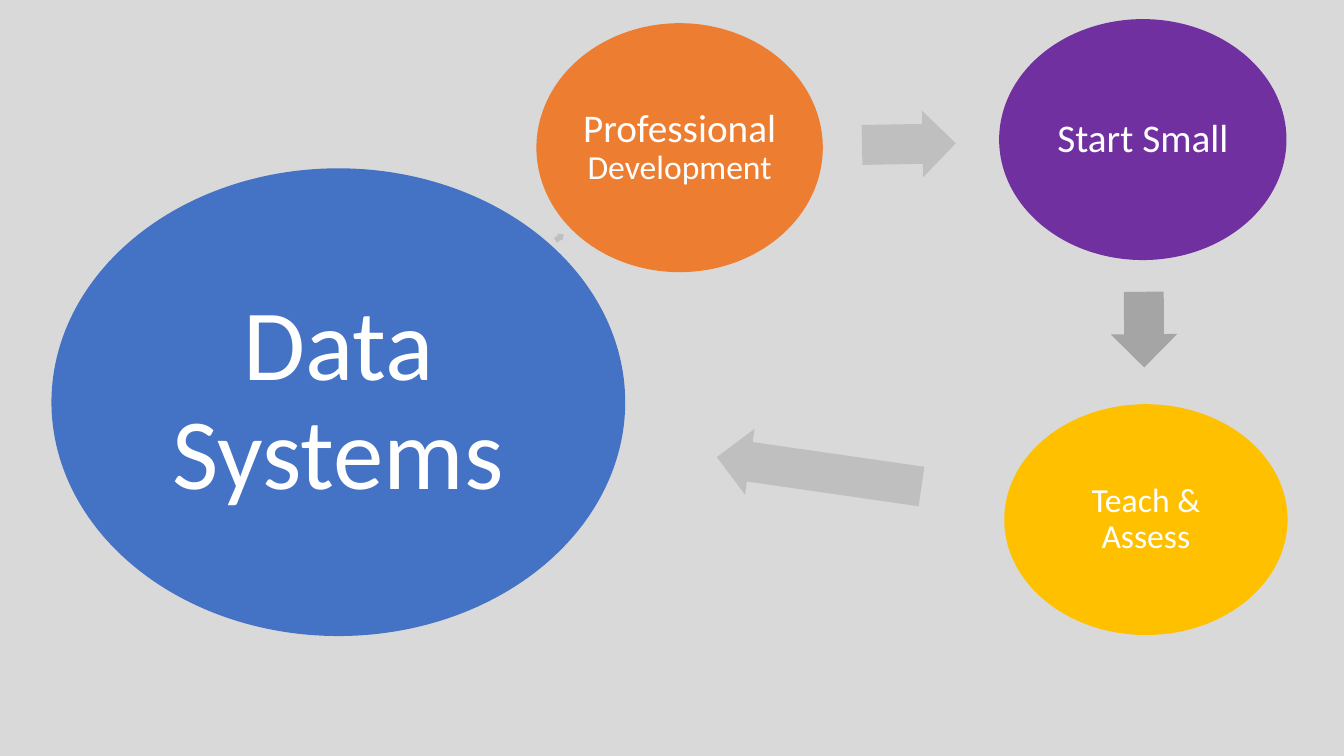
from pptx import Presentation
from pptx.dml.color import RGBColor
from pptx.enum.shapes import MSO_SHAPE
from pptx.enum.text import MSO_ANCHOR, PP_ALIGN
from pptx.util import Inches, Pt

OVAL = MSO_SHAPE.OVAL
ARROW = MSO_SHAPE.RIGHT_ARROW
MIDDLE = MSO_ANCHOR.MIDDLE
CENTER = PP_ALIGN.CENTER

PALE = RGBColor(0xD9, 0xD9, 0xD9)
SILVER = RGBColor(0xBF, 0xBF, 0xBF)
GREY = RGBColor(0xA5, 0xA5, 0xA5)
WHITE = RGBColor(0xFF, 0xFF, 0xFF)
ORANGE = RGBColor(0xED, 0x7D, 0x31)
PURPLE = RGBColor(0x70, 0x30, 0xA0)
GOLD = RGBColor(0xFF, 0xC0, 0x00)
BLUE = RGBColor(0x44, 0x72, 0xC4)

deck = Presentation()
deck.slide_width = Inches(13.33)
deck.slide_height = Inches(7.5)
col = deck.slide_width / 100
row = deck.slide_height / 100

slide = deck.slides.add_slide(deck.slide_layouts[6])
slide.background.fill.solid()
slide.background.fill.fore_color.rgb = PALE


def place(kind, box, fill):
    left, top, wide, high = box
    shape = slide.shapes.add_shape(
        kind, int(left * col), int(top * row), int(wide * col), int(high * row))
    shape.shadow.inherit = False
    shape.fill.solid()
    shape.fill.fore_color.rgb = fill
    shape.line.fill.background()
    return shape


steps = [
    ((39.91, 3.07, 21.31, 32.93), ORANGE, 0.04, [("Professional", 28), (" Development", 24)]),
    ((74.34, 2.53, 21.38, 31.87), PURPLE, 0.04, [("Start Small", 28)]),
    ((74.72, 53.47, 21.08, 30.53), GOLD, 0.03, [("Teach & Assess", 24)]),
    ((3.83, 22.27, 42.69, 61.87), BLUE, 0.1, [("Data Systems", 72)]),
]
for box, fill, inset, parts in steps:
    frame = place(OVAL, box, fill).text_frame
    frame.word_wrap = True
    frame.vertical_anchor = MIDDLE
    frame.margin_left = frame.margin_right = Inches(inset)
    frame.margin_top = frame.margin_bottom = Inches(inset)
    para = frame.paragraphs[0]
    para.alignment = CENTER
    para.line_spacing = 0.9
    para.font.name = "Calibri"
    para.font.color.rgb = WHITE
    for words, size in parts:
        run = para.add_run()
        run.text = words
        run.font.size = Pt(size)

arrows = [
    ((64.14, 14.67, 6.98, 8.8), 359, SILVER),
    ((82.3, 39.2, 5.63, 8.8), 89.6, GREY),
    ((53.26, 58, 15.38, 8.8), 188.2, SILVER),
    ((41.26, 30.8, 0.75, 1.2), 323.3, SILVER),
]
for box, angle, fill in arrows:
    arrow = place(ARROW, box, fill)
    arrow.rotation = angle
    arrow.adjustments[0] = 0.6
    arrow.adjustments[1] = 0.5

deck.save("out.pptx")
